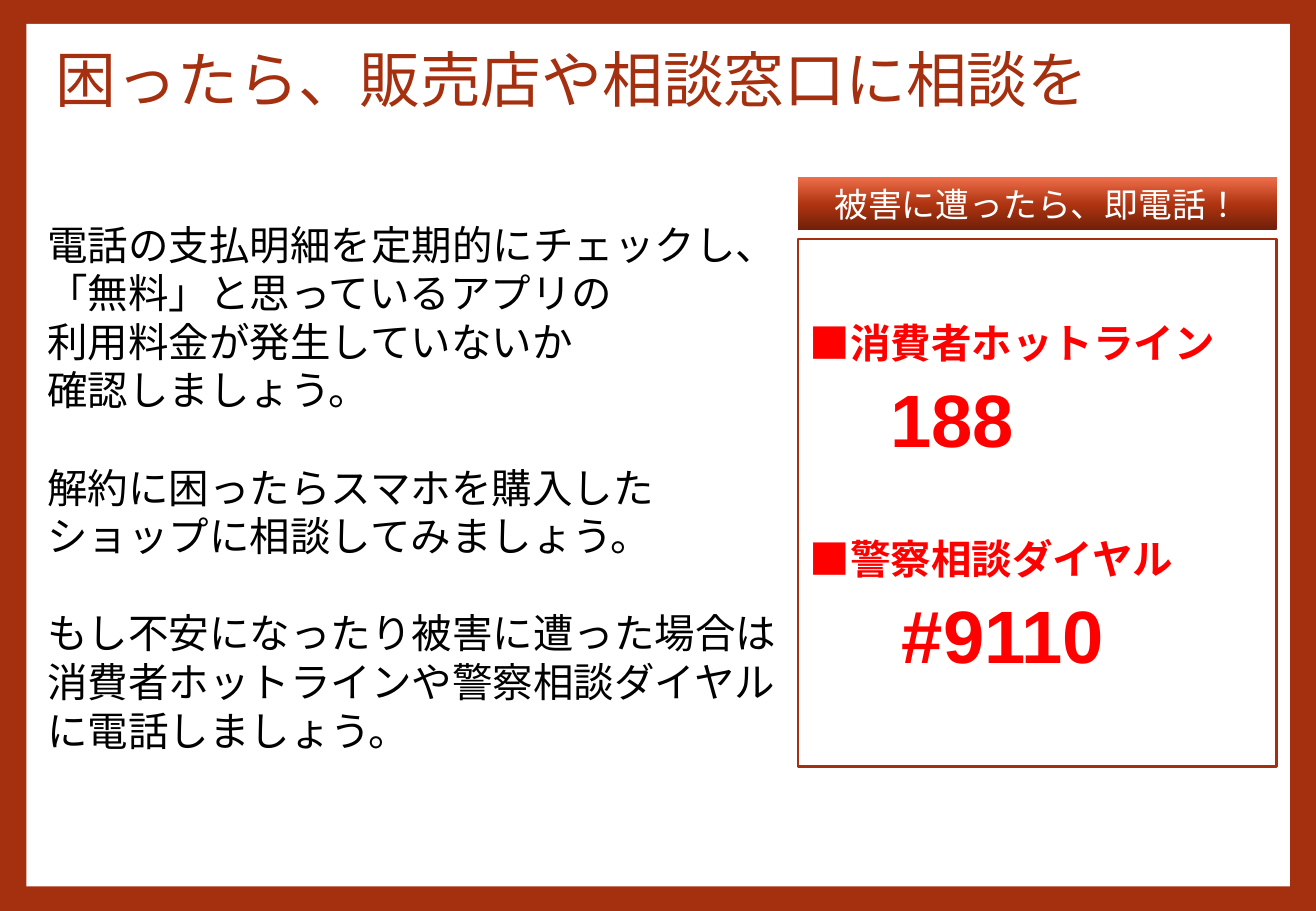
from copy import deepcopy

from pptx import Presentation
from pptx.dml.color import RGBColor
from pptx.enum.lang import MSO_LANGUAGE_ID
from pptx.enum.shapes import MSO_SHAPE
from pptx.enum.text import MSO_ANCHOR, PP_ALIGN
from pptx.oxml.ns import qn
from pptx.util import Pt

RECTANGLE = MSO_SHAPE.RECTANGLE
TOP, MIDDLE = MSO_ANCHOR.TOP, MSO_ANCHOR.MIDDLE
LEFT, CENTER = PP_ALIGN.LEFT, PP_ALIGN.CENTER
JAPANESE = MSO_LANGUAGE_ID.JAPANESE

BRICK = RGBColor(0xA5, 0x30, 0x0F)
WHITE = RGBColor(0xFF, 0xFF, 0xFF)
BLACK = RGBColor(0x00, 0x00, 0x00)
RED = RGBColor(0xFF, 0x00, 0x00)
BANNER_STOPS = [
    (0, RGBColor(0x6F, 0x20, 0x0A)),
    (0.48, RGBColor(0xAE, 0x33, 0x10)),
    (1, RGBColor(0xEE, 0x6E, 0x4A)),
]

BODY_SIZE = 24
BODY_GAP = 28.8
PANEL_LEFT, PANEL_WIDTH = 473, 283.7
ADVICE = [
    ("電話の支払明細を定期的にチェックし、「無料」と思っているアプリの", 0),
    ("利用料金が発生していないか", 0),
    ("確認しましょう。", 0),
    ("解約に困ったらスマホを購⼊した", BODY_GAP),
    ("ショップに相談してみましょう。", 0),
    ("もし不安になったり被害に遭った場合は\v消費者ホットラインや警察相談ダイヤル\vに電話しましょう。", BODY_GAP),
]
HOTLINES = [
    ("■消費者ホットライン", "188", 0, 47.5),
    ("■警察相談ダイヤル", "#9110", 42.5, 54.5),
]


class SlideBuilder:
    """Draws styled elements on the current slide."""

    def __init__(self, slide):
        self.slide = slide
        slide.background.fill.solid()
        slide.background.fill.fore_color.rgb = BRICK

    def rectangle(self, left, top, width, height, line=None):
        shape = self.slide.shapes.add_shape(RECTANGLE, Pt(left), Pt(top), Pt(width), Pt(height))
        shape.shadow.inherit = False
        shape.fill.solid()
        shape.fill.fore_color.rgb = WHITE
        if line is None:
            shape.line.fill.background()
        else:
            shape.line.color.rgb = line
            shape.line.width = Pt(1.5)
        return shape

    def gradient(self, shape, stops):
        shape.fill.gradient()
        shape.fill.gradient_angle = 90
        stop_list = shape.fill._xPr.find(qn("a:gradFill")).find(qn("a:gsLst"))
        while len(stop_list) < len(stops):
            stop_list.append(deepcopy(stop_list[0]))
        for stop, (position, color) in zip(shape.fill.gradient_stops, stops):
            stop.position = position
            stop.color.rgb = color

    def text_box(self, left, top, width, height, anchor=TOP):
        shape = self.slide.shapes.add_textbox(Pt(left), Pt(top), Pt(width), Pt(height))
        self.frame(shape, anchor)
        return shape

    def frame(self, shape, anchor, top_margin=3.6):
        shape.text_frame.word_wrap = True
        shape.text_frame.vertical_anchor = anchor
        shape.text_frame.margin_top = Pt(top_margin)

    def paragraph(self, shape, text, size, color, font="Arial", bold=False,
                  align=LEFT, before=0, indent=0):
        frame = shape.text_frame
        paragraph = frame.add_paragraph() if frame.text else frame.paragraphs[0]
        paragraph.text = text
        paragraph.alignment = align
        if before:
            paragraph.space_before = Pt(before)
        if indent:
            paragraph._p.get_or_add_pPr().set("marL", str(Pt(indent)))
        paragraph.font.name = font
        paragraph.font.size = Pt(size)
        paragraph.font.bold = bold
        paragraph.font.color.rgb = color
        paragraph.font.language_id = JAPANESE
        return paragraph


def main():
    presentation = Presentation()
    presentation.slide_width = Pt(780)
    presentation.slide_height = Pt(540)
    builder = SlideBuilder(presentation.slides.add_slide(presentation.slide_layouts[6]))

    builder.rectangle(15.6, 14.2, 749, 511.2)

    title = builder.text_box(26, 23, 738, 52, MIDDLE)
    heading = builder.paragraph(title, "困ったら、販売店や相談窓口に相談を", 36, BRICK, "Calibri")
    heading.line_spacing = 0.9

    advice = builder.text_box(21, 126.7, 447.2, 327)
    for text, before in ADVICE:
        builder.paragraph(advice, text, BODY_SIZE, BLACK, before=before)

    panel = builder.rectangle(PANEL_LEFT, 141.8, PANEL_WIDTH, 312.5, BRICK)
    builder.frame(panel, TOP, 46.8)
    for name, number, before, indent in HOTLINES:
        builder.paragraph(panel, name, BODY_SIZE, RED, bold=True, before=before)
        builder.paragraph(panel, number, 44, RED, bold=True, before=4, indent=indent)

    banner = builder.rectangle(PANEL_LEFT, 105, PANEL_WIDTH, 31.5)
    builder.gradient(banner, BANNER_STOPS)
    builder.frame(banner, MIDDLE)
    builder.paragraph(banner, "被害に遭ったら、即電話！", 20, WHITE, "Calibri", align=CENTER)

    presentation.save("out.pptx")


if __name__ == "__main__":
    main()
